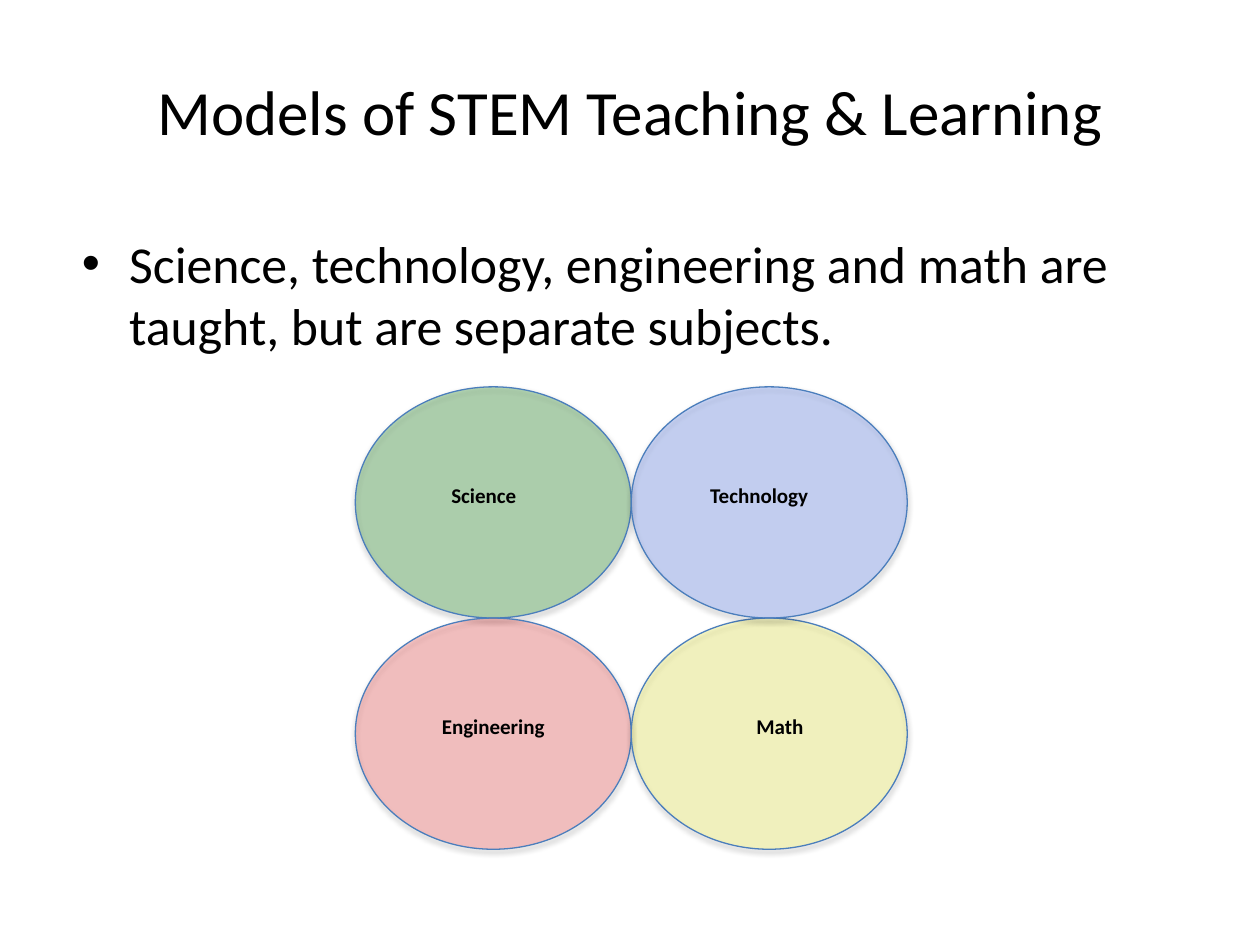
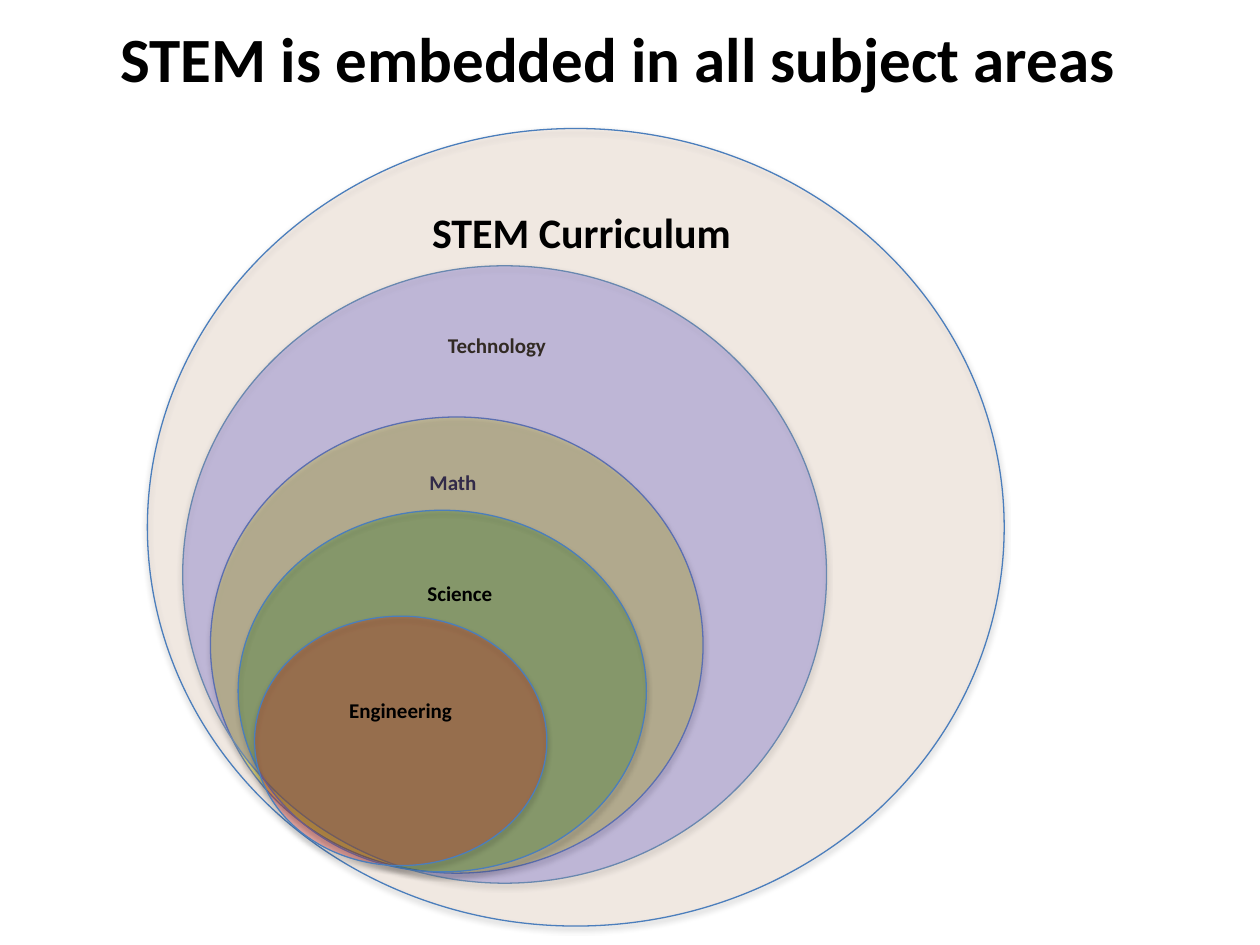
from lxml import etree
from pptx import Presentation
from pptx.dml.color import RGBColor
from pptx.enum.shapes import MSO_SHAPE
from pptx.enum.text import MSO_ANCHOR, MSO_AUTO_SIZE, PP_ALIGN
from pptx.oxml.ns import qn
from pptx.util import Inches, Pt

FONT, BLACK, OUTLINE = "Calibri", "000000", "4B7EBC"
GREEN, RED, YELLOW = "008000", "FF0000", "FFFF00"
TITLE_ONLY, TITLE_AND_BODY = 5, 1

SEPARATE_TITLE = "Models of STEM Teaching & Learning"
SEPARATE_BODY = ("Science, technology, engineering and math are taught, "
                 "but are separate subjects.")
GRID_LEFT, GRID_TOP, CELL_W, CELL_H = 2.82, 3.07, 2.19, 1.835
LABEL_DROP, LABEL_H = 0.71, 0.42
# subject, column, row, colour, opacity %, label left, label width
SEPARATE = [
    ("Science", 0, 0, GREEN, 26, 3.29, 1.1),
    ("Engineering", 0, 1, RED, 20, 3.13, 1.57),
    ("Math", 1, 1, YELLOW, 20, 5.64, 1.1),
    ("Technology", 1, 0, "3366FF", 22, 5.32, 1.41),
]

EMBEDDED_TITLE = "STEM is embedded in all subject areas"
# subject, text size, colour, opacity %, ellipse box, label box
EMBEDDED = [
    ("Math", 12, YELLOW, 43, (1.67, 3.31, 3.91, 3.62), (2.62, 3.68, 1.95, 0.51)),
    ("Technology", 12, "0000FF", 20, (1.45, 2.11, 5.11, 4.9), (3.08, 2.59, 1.73, 0.4)),
    ("STEM Curriculum", 24, "FCD5B5", 20, (1.17, 1.02, 6.8, 6.33), (2.97, 1.59, 3.29, 0.62)),
    ("Science", 12, GREEN, 19, (1.89, 4.05, 3.24, 2.87), (3.01, 4.56, 1.28, 0.21)),
    ("Engineering", 12, RED, 21, (2.02, 4.89, 2.32, 1.98), (2.35, 5.49, 1.66, 0.46)),
]


def rgb(value):
    return RGBColor.from_string(value)


def inches(box):
    return [Inches(v) for v in box]


def place(sp, box):
    for name, value in zip(("left", "top", "width", "height"), inches(box)):
        setattr(sp, name, value)


def write(sp, text, size, bold=False, align=PP_ALIGN.CENTER, anchor=MSO_ANCHOR.TOP):
    tf = sp.text_frame
    frame = {"word_wrap": True, "auto_size": MSO_AUTO_SIZE.NONE, "vertical_anchor": anchor}
    for name, value in frame.items():
        setattr(tf, name, value)
    p = tf.paragraphs[0]
    p.alignment, p.space_before = align, Pt(0)
    r = p.add_run()
    r.text = text
    for name, value in {"name": FONT, "size": Pt(size), "bold": bold}.items():
        setattr(r.font, name, value)
    r.font.color.rgb = rgb(BLACK)


def add_alpha(color, percent):
    etree.SubElement(color, qn("a:alpha"), val=str(percent * 1000))


def add_shadow(sp):
    """Give the shape a soft black shadow that falls straight down."""
    sp.shadow.inherit = False
    effects = sp._element.spPr.find(qn("a:effectLst"))
    shadow = etree.SubElement(effects, qn("a:outerShdw"), blurRad=str(Pt(3.1)),
                              dist=str(Pt(1.8)), dir="5400000", rotWithShape="0")
    color = etree.SubElement(shadow, qn("a:srgbClr"), val=BLACK)
    add_alpha(color, 35)


def add_subject(slide, text, size, color, opacity, box, label_box):
    """Group a see-through ellipse with its label."""
    shapes = slide.shapes.add_group_shape().shapes
    sp = shapes.add_shape(MSO_SHAPE.OVAL, *inches(box))
    sp.fill.solid()
    sp.fill.fore_color.rgb = rgb(color)
    add_alpha(sp._element.spPr.find(qn("a:solidFill"))[0], opacity)
    sp.line.color.rgb = rgb(OUTLINE)
    sp.line.width = Pt(0.75)
    add_shadow(sp)
    write(shapes.add_textbox(*inches(label_box)), text, size, bold=True)


def add_slide(prs, layout, title, box, bold=False):
    slide = prs.slides.add_slide(prs.slide_layouts[layout])
    place(slide.shapes.title, box)
    write(slide.shapes.title, title, 36, bold, anchor=MSO_ANCHOR.MIDDLE)
    return slide


def build_separate(prs):
    slide = add_slide(prs, TITLE_AND_BODY, SEPARATE_TITLE, (0, 0.43, 10, 0.89))
    body = slide.placeholders[1]
    place(body, (0.55, 1.79, 8.9, 1.03))
    write(body, SEPARATE_BODY, 29.6, align=PP_ALIGN.LEFT)
    for text, col, row, color, opacity, label_left, label_w in SEPARATE:
        top = GRID_TOP + row * CELL_H
        add_subject(slide, text, 12, color, opacity,
                    (GRID_LEFT + col * CELL_W, top, CELL_W, CELL_H),
                    (label_left, top + LABEL_DROP, label_w, LABEL_H))


def build_embedded(prs):
    slide = add_slide(prs, TITLE_ONLY, EMBEDDED_TITLE, (0.46, 0, 8.89, 0.91), bold=True)
    for subject in EMBEDDED:
        add_subject(slide, *subject)


def main():
    prs = Presentation()
    prs.slide_width, prs.slide_height = Inches(10), Inches(7.5)
    build_separate(prs)
    build_embedded(prs)
    prs.save("out.pptx")


if __name__ == "__main__":
    main()
